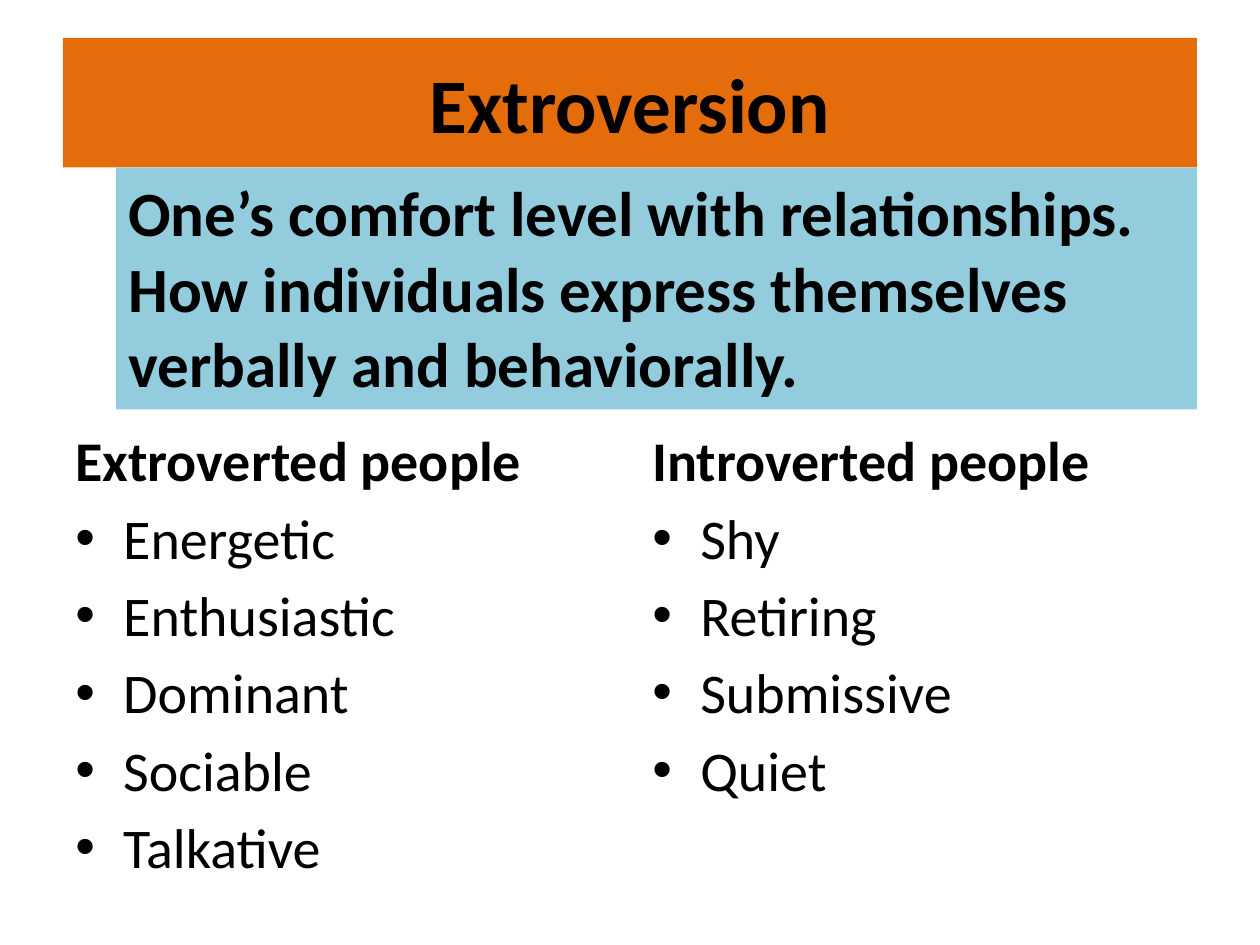
from dataclasses import dataclass
from typing import Optional

from lxml import etree
from pptx import Presentation
from pptx import util as u
from pptx.dml.color import RGBColor
from pptx.enum import shapes, text
from pptx.oxml import ns

COLOURS = {"orange": "E46C0A", "blue": "93CDDD", "black": "000000"}
FONT = "Calibri"
INDENT = u.Inches(0.38)


@dataclass
class Area:
    left: float
    top: float
    width: float
    height: float

    def lengths(self) -> list:
        return [u.Inches(n) for n in (self.left, self.top, self.width, self.height)]


@dataclass
class Banner:
    area: Area
    fill: str
    wording: str
    size: int
    align: text.PP_ALIGN
    anchor: text.MSO_ANCHOR


@dataclass
class TraitList:
    area: Area
    heading: str
    traits: list[str]


BANNERS = [
    Banner(Area(0.5, 0.3, 9, 1.03), "orange", "Extroversion", 44,
           text.PP_ALIGN.CENTER, text.MSO_ANCHOR.MIDDLE),
    Banner(Area(0.92, 1.33, 8.58, 1.92), "blue",
           "One’s comfort level with relationships. How individuals express "
           "themselves verbally and behaviorally.", 36,
           text.PP_ALIGN.LEFT, text.MSO_ANCHOR.TOP),
]
TRAIT_LISTS = [
    TraitList(Area(0.5, 3.33, 4.4, 4.08), "Extroverted people",
              ["Energetic", "Enthusiastic", "Dominant", "Sociable", "Talkative"]),
    TraitList(Area(5.08, 3.33, 4.4, 3.33), "Introverted people",
              ["Shy", "Retiring", "Submissive", "Quiet"]),
]


def write(para, wording: str, *, size: int, bold: bool = False,
          align: text.PP_ALIGN = text.PP_ALIGN.LEFT, before: float = 0,
          hanging: bool = False, bullet: Optional[str] = None) -> None:
    para.alignment = align
    para.space_before = u.Pt(before)
    span = para.add_run()
    span.text = wording
    span.font.name = FONT
    span.font.size = u.Pt(size)
    span.font.bold = bold
    span.font.color.rgb = RGBColor.from_string(COLOURS["black"])
    properties = para._p.get_or_add_pPr()
    if hanging:
        properties.set("marL", str(INDENT))
        properties.set("indent", str(-INDENT))
    if bullet:
        face = etree.SubElement(properties, ns.qn("a:buFont"))
        face.set("typeface", "Arial")
        mark = etree.SubElement(properties, ns.qn("a:buChar"))
        mark.set("char", bullet)


def draw_banner(page, banner: Banner) -> None:
    box = page.shapes.add_shape(shapes.MSO_SHAPE.RECTANGLE, *banner.area.lengths())
    box.shadow.inherit = False
    box.fill.solid()
    box.fill.fore_color.rgb = RGBColor.from_string(COLOURS[banner.fill])
    box.line.fill.background()
    frame = box.text_frame
    frame.word_wrap = True
    frame.vertical_anchor = banner.anchor
    write(frame.paragraphs[0], banner.wording, size=banner.size, bold=True,
          align=banner.align)


def draw_traits(page, column: TraitList) -> None:
    frame = page.shapes.add_textbox(*column.area.lengths()).text_frame
    frame.word_wrap = True
    write(frame.paragraphs[0], column.heading, size=32, bold=True,
          before=5.8, hanging=True)
    for trait in column.traits:
        write(frame.add_paragraph(), trait, size=32, before=5.8,
              hanging=True, bullet="•")


def main() -> None:
    deck = Presentation()
    deck.slide_width = u.Inches(10)
    deck.slide_height = u.Inches(7.5)
    page = deck.slides.add_slide(deck.slide_layouts[6])
    for banner in BANNERS:
        draw_banner(page, banner)
    for column in TRAIT_LISTS:
        draw_traits(page, column)
    deck.save("out.pptx")


if __name__ == "__main__":
    main()
